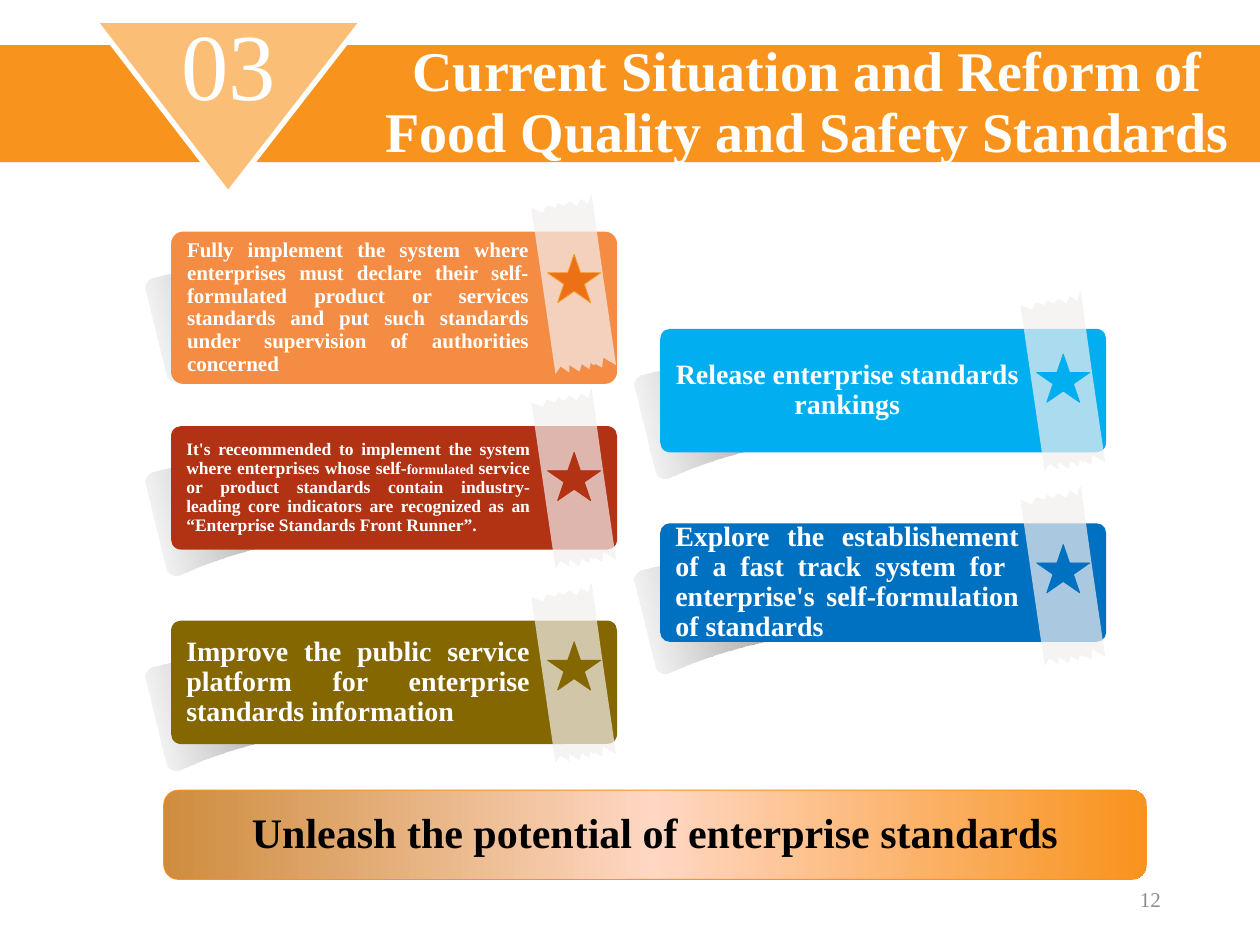
from lxml import etree
from pptx import Presentation
from pptx.dml.color import RGBColor
from pptx.enum.shapes import MSO_SHAPE
from pptx.enum.text import MSO_ANCHOR, PP_ALIGN
from pptx.oxml import parse_xml
from pptx.oxml.ns import nsdecls, qn
from pptx.util import Cm, Pt

RECT, ROUND, STAR = MSO_SHAPE.RECTANGLE, MSO_SHAPE.ROUNDED_RECTANGLE, MSO_SHAPE.STAR_5_POINT
MIDDLE = MSO_ANCHOR.MIDDLE
CENTER, RIGHT, JUSTIFY = PP_ALIGN.CENTER, PP_ALIGN.RIGHT, PP_ALIGN.JUSTIFY
FONT = "Times New Roman"
COLORS = {
    "white": "FFFFFF", "black": "000000", "number": "8C8C8C",
    "orange": "F8931D", "peach": "FBBE77", "bronze": "CE8D3E", "blush": "FFD7C3",
    "coral": "F58C44", "flame": "EC7016", "rust": "B23214", "olive": "846700",
    "sky": "01AEF0", "blue": "0070C0", "tape": "F3EFEF", "fold": "5F5F5F",
}
FOLD = [
    [(-0.51, 1.14)],
    [(-0.53, 1.07), (-0.46, 0.97), (-0.38, 0.94)],
    [(3.25, 0.08)],
    [(3.35, 0.05), (3.91, 0.38), (3.94, 0.46)],
    [(4.34, 1.8)],
    [(4.37, 1.91), (4.32, 2.01), (4.24, 2.01)],
    [(2.92, 2.24), (1.57, 2.36), (0.13, 3.02)],
    [(0.03, 3.02), (-0.05, 2.97), (-0.08, 2.9)],
]
TAPE = [
    (8.48, -0.74), (8.71, 0.91), (8.97, 2.69), (8.71, 2.54), (8.69, 2.74), (8.56, 2.67),
    (8.51, 2.69), (8.46, 2.64), (8.43, 2.77), (8.28, 2.67), (8.23, 2.82), (8.03, 2.69),
    (8.03, 2.84), (7.85, 2.72), (7.75, 2.87), (7.49, 1.09), (7.26, -0.48), (7.49, -0.38),
    (7.57, -0.53), (7.75, -0.48), (7.8, -0.58), (7.92, -0.51), (8.03, -0.61),
    (8.18, -0.51), (8.26, -0.66), (8.41, -0.56), (8.46, -0.74),
]
CARDS = [
    ("coral", "flame", "orange", 3.07, 0.46, 12, JUSTIFY,
     ["Fully implement the system where enterprises must declare their self-formulated "
      "product or services standards and put such standards under supervision of "
      "authorities concerned"]),
    ("sky", "sky", "sky", 2.49, 0.51, 16, CENTER,
     ["Release enterprise standards rankings"]),
    ("rust", "rust", "rust", 2.49, 0.53, 10, JUSTIFY,
     ["It's receommended to implement the system where enterprises whose self-",
      ("formulated ", 8),
      "service or product standards contain industry-leading core indicators are "
      "recognized as an “Enterprise Standards Front Runner”."]),
    ("blue", "blue", "blue", 2.39, 0.43, 16, JUSTIFY,
     ["Explore the establishement of a fast track system for  enterprise's "
      "self-formulation of standards"]),
    ("olive", "olive", "olive", 2.49, 0.43, 16, JUSTIFY,
     ["Improve the public service platform for enterprise standards information"]),
]


def rgb(name):
    return RGBColor.from_string(COLORS[name])


def flatten(segments, steps=8):
    points = list(segments[0])
    for seg in segments[1:]:
        if len(seg) == 1:
            points += seg
            continue
        a, (b, c, d) = points[-1], seg
        for i in range(1, steps + 1):
            t = i / steps
            u = 1 - t
            points.append(tuple(
                u**3 * a[k] + 3 * u * u * t * b[k] + 3 * u * t * t * c[k] + t**3 * d[k]
                for k in (0, 1)))
    return points


def write(sp, runs, size=12, color="white", bold=True, align=CENTER,
          insets=(0.25, 0.13, 0.25, 0.13)):
    tf = sp.text_frame
    tf.word_wrap = True
    tf.vertical_anchor = MIDDLE
    tf.margin_left, tf.margin_top, tf.margin_right, tf.margin_bottom = map(Cm, insets)
    p = tf.paragraphs[0]
    p.alignment = align
    p.line_spacing = 0.9
    for item in runs:
        text, run_size = item if isinstance(item, tuple) else (item, size)
        r = p.add_run()
        r.text = text
        r.font.name = FONT
        r.font.size = Pt(run_size)
        r.font.bold = bold
        r.font.color.rgb = rgb(color)


def gradient(sp, stops, angle=0):
    gs = "".join(
        f'<a:gs pos="{pos * 1000}"><a:srgbClr val="{COLORS[name]}">'
        f'<a:alpha val="{alpha * 1000}"/></a:srgbClr></a:gs>' for pos, name, alpha in stops)
    sp.fill.background()
    old = sp._element.spPr.find(qn("a:noFill"))
    old.getparent().replace(old, parse_xml(
        f'<a:gradFill rotWithShape="1" {nsdecls("a")}><a:gsLst>{gs}</a:gsLst>'
        f'<a:lin ang="{round(angle * 60000)}" scaled="0"/></a:gradFill>'))


class Deck:
    def __init__(self, width, height):
        self.prs = Presentation()
        self.prs.slide_width, self.prs.slide_height = Cm(width), Cm(height)
        self.s = self.prs.slides.add_slide(self.prs.slide_layouts[6])

    def style(self, sp, fill, line, width, alpha=100):
        sp.shadow.inherit = False
        if fill:
            sp.fill.solid()
            sp.fill.fore_color.rgb = rgb(fill)
            if alpha < 100:
                clr = sp._element.spPr.find(qn("a:solidFill"))[0]
                etree.SubElement(clr, qn("a:alpha")).set("val", str(alpha * 1000))
        if line:
            sp.line.color.rgb = rgb(line)
            sp.line.width = Pt(width)
        else:
            sp.line.fill.background()
        return sp

    def shape(self, kind, x, y, w, h, fill=None, line=None, width=0.5):
        sp = self.s.shapes.add_shape(kind, Cm(x), Cm(y), Cm(w), Cm(h))
        return self.style(sp, fill, line, width)

    def polygon(self, points, x=0, y=0, fill=None, line=None, width=0.5, alpha=100):
        pts = [(Cm(x + px), Cm(y + py)) for px, py in points]
        fb = self.s.shapes.build_freeform(*pts[0], scale=1.0)
        fb.add_line_segments(pts[1:], close=True)
        return self.style(fb.convert_to_shape(), fill, line, width, alpha)

    def textbox(self, x, y, w, h, runs, **fmt):
        write(self.s.shapes.add_textbox(Cm(x), Cm(y), Cm(w), Cm(h)), runs, **fmt)

    def card(self, x, y, fill, star, star_line, height, star_y, size, align, runs):
        fold = self.polygon(flatten(FOLD), x, y)
        gradient(fold, [(0, "fold", 0), (100, "fold", 100)], 346.4)
        sp = self.shape(ROUND, x, y, 8.99, height, fill)
        sp.adjustments[0] = 0.08
        write(sp, runs, size=size, align=align, insets=(0.25, 0.13, 1.7, 0.13))
        self.polygon(TAPE, x, y, "tape", alpha=70)
        self.shape(STAR, x + 7.59, y + star_y, 1.07, 0.97, star, star_line)


def main():
    deck = Deck(25.4, 19.05)

    bar = deck.shape(ROUND, 3.3, 15.93, 19.81, 1.8, line="orange")
    gradient(bar, [(0, "bronze", 100), (50, "blush", 100), (100, "orange", 100)])
    write(bar, ["Unleash the potential of enterprise standards"], size=24, color="black")

    for i, card in enumerate(CARDS):
        deck.card(3.45 + i % 2 * 9.86, 4.67 + i * 1.96, *card)

    title = deck.shape(RECT, -0.08, 0.91, 25.48, 2.36, "orange")
    write(title, ["Current Situation and Reform of Food Quality and Safety Standards"],
          size=32, insets=(7.49, 0.13, 0.25, 0.13))
    badge = deck.polygon([(1.9, 0.41), (7.32, 0.41), (4.6, 3.91)],
                         fill="peach", line="white", width=3)
    write(badge, ["03"], size=54, bold=False, insets=(0.25, 0, 0.25, 1.5))
    deck.textbox(17.93, 17.65, 5.72, 1.02, ["12"], color="number", bold=False, align=RIGHT)

    deck.prs.save("out.pptx")


if __name__ == "__main__":
    main()
